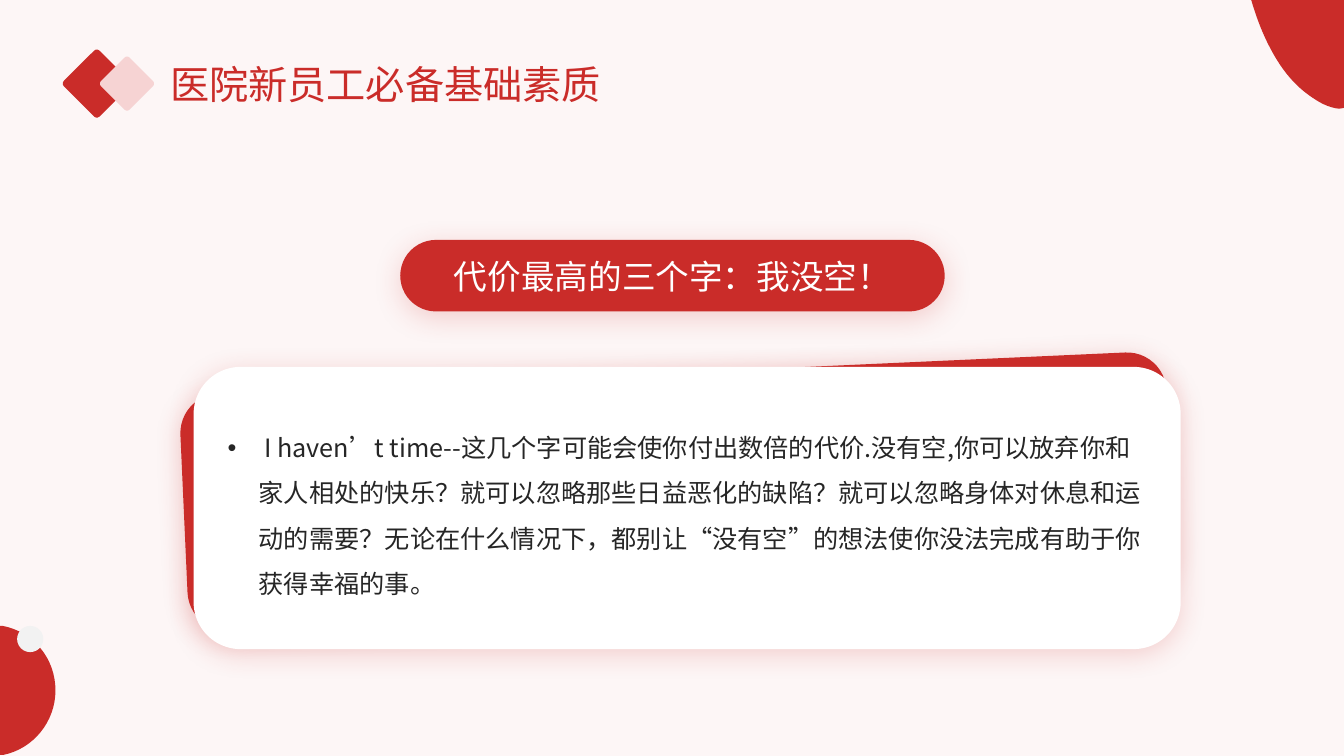
from lxml import etree
from pptx import Presentation
from pptx.dml.color import RGBColor
from pptx.enum.shapes import MSO_SHAPE
from pptx.enum.text import MSO_ANCHOR, PP_ALIGN
from pptx.oxml import parse_xml
from pptx.oxml.ns import nsdecls, qn
from pptx.util import Inches, Pt

ROUND = MSO_SHAPE.ROUNDED_RECTANGLE
OVAL = MSO_SHAPE.OVAL
MIDDLE = MSO_ANCHOR.MIDDLE
CENTER = PP_ALIGN.CENTER
LEFT = PP_ALIGN.LEFT
FONT = "Noto Sans CJK SC"
RED, PINK, WHITE = "CA2C29", "F6D3D3", "FFFFFF"


def paint(s, color, glow=False):
    s.fill.solid()
    s.fill.fore_color.rgb = RGBColor.from_string(color)
    s.line.fill.background()
    s.shadow.inherit = False
    if glow:
        s._element.spPr.find(qn("a:effectLst")).append(parse_xml(
            f'<a:outerShdw {nsdecls("a")} blurRad="{Pt(20)}" dist="{Pt(4)}" '
            'dir="5400000" algn="t" rotWithShape="0">'
            f'<a:srgbClr val="{RED}"><a:alpha val="20000"/></a:srgbClr></a:outerShdw>'))


def write(s, text, size, color, align):
    p = s.text_frame.paragraphs[0]
    p.text = text
    p.alignment = align
    r = p.runs[0]
    r.font.size = Pt(size)
    r.font.name = FONT
    r.font.color.rgb = RGBColor.from_string(color)
    etree.SubElement(r._r.get_or_add_rPr(), qn("a:ea")).set("typeface", FONT)
    return p


prs = Presentation()
prs.slide_width, prs.slide_height = Inches(13.33), Inches(7.5)
slide = prs.slides.add_slide(prs.slide_layouts[6])
slide.background.fill.solid()
slide.background.fill.fore_color.rgb = RGBColor.from_string("FDF6F6")

top_corner = [(1333, 0),
              (1333, 35), (1333, 69), (1333, 104),
              (1333, 105), (1333, 106), (1333, 107),
              (1330, 108), (1326, 108), (1323, 107),
              (1314, 105), (1306, 100), (1299, 95),
              (1282, 83), (1270, 67), (1260, 48),
              (1252, 33), (1246, 17), (1241, 0),
              (1272, 0), (1303, 0), (1333, 0)]
bottom_corner = [(3, 749),
                 (33, 743), (55, 716), (55, 685),
                 (55, 653), (33, 627), (3, 621),
                 (0, 621), (0, 749)]
for points in (top_corner, bottom_corner):
    builder = slide.shapes.build_freeform(*points[0], scale=Inches(0.01))
    builder.add_line_segments(points[1:], close=True)
    s = builder.convert_to_shape()
    paint(s, RED)
    lines = list(s._element.spPr.iter(qn("a:lnTo")))
    for i in range(0, len(lines) - 2, 3):
        curve = lines[i]
        curve.tag = qn("a:cubicBezTo")
        for line in lines[i + 1:i + 3]:
            curve.append(line[0])
            line.getparent().remove(line)

dot = slide.shapes.add_shape(OVAL, Inches(0.17), Inches(6.21), Inches(0.26), Inches(0.26))
paint(dot, "F2F2F2")

title = slide.shapes.add_textbox(Inches(1.59), Inches(0.55), Inches(4.52), Inches(0.57))
title.text_frame.word_wrap = False
write(title, "医院新员工必备基础素质", 28, RED, LEFT)

for left, top, size, radius, color in [(0.71, 0.58, 0.5, 0.076, RED),
                                       (1.06, 0.63, 0.4, 0.085, PINK)]:
    s = slide.shapes.add_shape(ROUND, Inches(left), Inches(top), Inches(size), Inches(size))
    s.adjustments[0] = radius
    s.rotation = 45
    paint(s, color)

banner = slide.shapes.add_shape(ROUND, Inches(3.97), Inches(2.38), Inches(5.4), Inches(0.71))
banner.adjustments[0] = 0.5
paint(banner, RED, glow=True)
banner.text_frame.vertical_anchor = MIDDLE
write(banner, "代价最高的三个字：我没空！", 24, WHITE, CENTER)

backing = slide.shapes.add_shape(ROUND, Inches(1.82), Inches(3.7), Inches(9.79), Inches(2.35))
backing.rotation = 357.4
paint(backing, RED, glow=True)

card = slide.shapes.add_shape(ROUND, Inches(1.92), Inches(3.64), Inches(9.79), Inches(2.8))
paint(card, WHITE, glow=True)
tf = card.text_frame
tf.word_wrap = True
tf.vertical_anchor = MIDDLE
tf.margin_left = tf.margin_right = Inches(0.2)
p = write(card, " I haven’t time--这几个字可能会使你付出数倍的代价.没有空,你可以放弃"
          "你和家人相处的快乐？就可以忽略那些日益恶化的缺陷？就可以忽略身体对休息"
          "和运动的需要？无论在什么情况下，都别让“没有空”的想法使你没法完成有助"
          "于你获得幸福的事。", 18, "262626", LEFT)
p.line_spacing = 1.5
pPr = p._p.get_or_add_pPr()
pPr.set("marL", str(Inches(0.31)))
pPr.set("indent", str(-Inches(0.31)))
etree.SubElement(pPr, qn("a:buFont")).set("typeface", "Arial")
etree.SubElement(pPr, qn("a:buChar")).set("char", "•")

prs.save("out.pptx")
